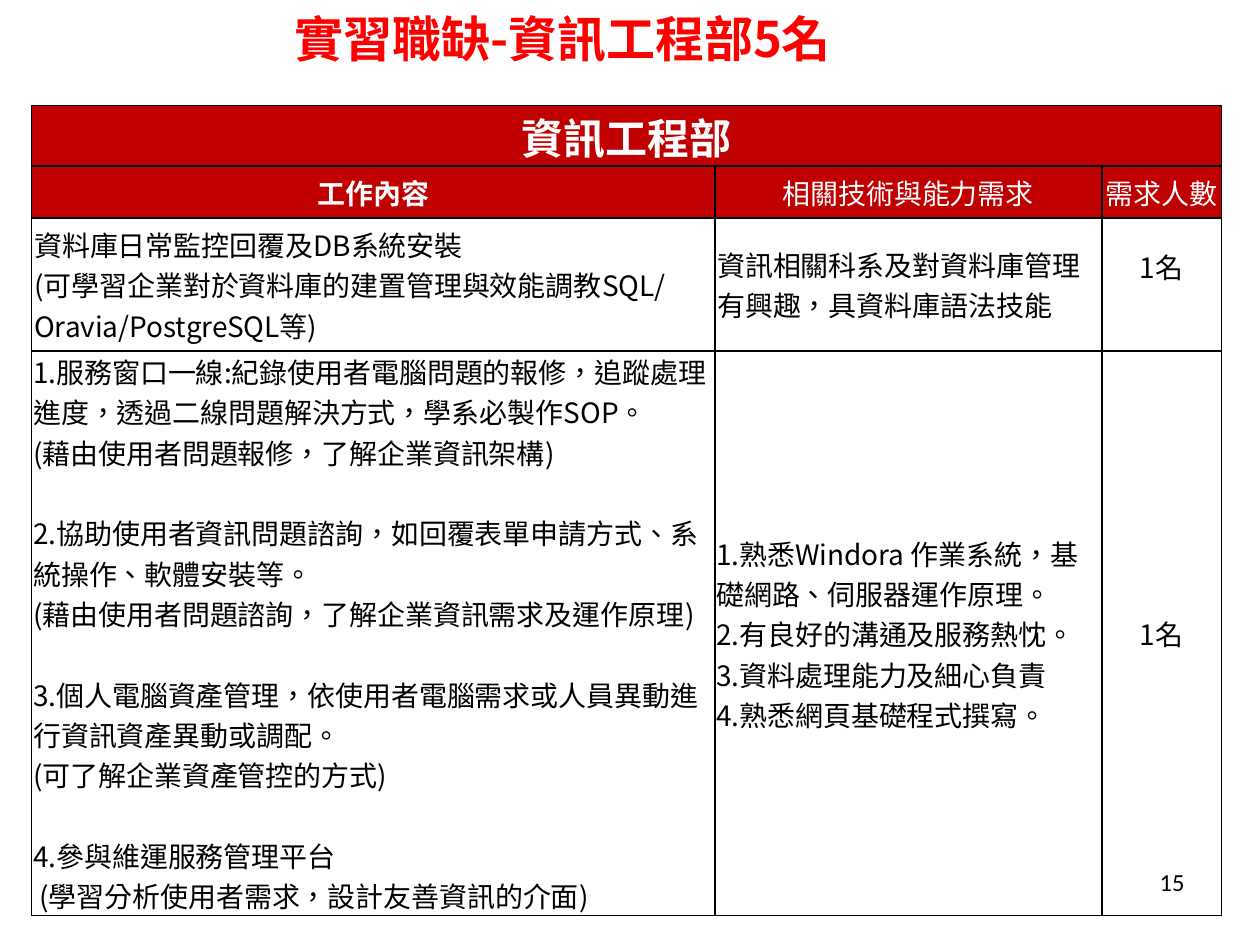
from pptx import Presentation
from pptx.dml.color import RGBColor
from pptx.enum.lang import MSO_LANGUAGE_ID as LANG
from pptx.enum.text import MSO_ANCHOR as ANCHOR, PP_ALIGN as ALIGN
from pptx.oxml import parse_xml
from pptx.oxml.ns import nsdecls
from pptx.util import Cm, Pt

CJK = "Noto Sans CJK SC"
RED, BLACK, WHITE = "C00000", "000000", "FFFFFF"


def add_text(tf, text, size=16, color=BLACK, bold=False, font=CJK,
             align=ALIGN.LEFT, gap=0):
    """Write one paragraph per line; a line after "\n\n" gets gap points before it."""
    tf.word_wrap = True
    for b, block in enumerate(text.split("\n\n")):
        for i, line in enumerate(block.split("\n")):
            p = tf.paragraphs[0] if b == i == 0 else tf.add_paragraph()
            p.alignment = align
            if b and i == 0:
                p.space_before = Pt(gap)
            r = p.add_run()
            r.text = line
            f = r.font
            f.size, f.bold, f.name = Pt(size), bold, font
            f.color.rgb = RGBColor.from_string(color)
            f.language_id = LANG.TRADITIONAL_CHINESE
            r._r.get_or_add_rPr().append(
                parse_xml(f'<a:ea {nsdecls("a")} typeface="{font}"/>'))


def add_borders(cell, color=BLACK, width=1):
    tc_pr = cell._tc.get_or_add_tcPr()
    for side in ("lnL", "lnR", "lnT", "lnB"):
        tc_pr.append(parse_xml(
            f'<a:{side} {nsdecls("a")} w="{Pt(width)}"><a:solidFill>'
            f'<a:srgbClr val="{color}"/></a:solidFill></a:{side}>'))


prs = Presentation()
prs.slide_width, prs.slide_height = Cm(25.4), Cm(19.05)
s = prs.slides.add_slide(prs.slide_layouts[6])

# Title
tf = s.shapes.add_textbox(Cm(5.69), Cm(0), Cm(19), Cm(1.52)).text_frame
tf.vertical_anchor = ANCHOR.MIDDLE
add_text(tf, "實習職缺-資訊工程部5名", size=28, color="FF0000", bold=True)

# Page number
tf = s.shapes.add_textbox(Cm(18.21), Cm(17.35), Cm(5.92), Cm(1.32)).text_frame
add_text(tf, "15", size=14, font="Calibri", align=ALIGN.RIGHT)

# Table contents
duties = """1.服務窗口一線:紀錄使用者電腦問題的報修，追蹤處理進度，透過二線問題解決方式，學系必製作SOP。
(藉由使用者問題報修，了解企業資訊架構)

2.協助使用者資訊問題諮詢，如回覆表單申請方式、系統操作、軟體安裝等。
(藉由使用者問題諮詢，了解企業資訊需求及運作原理)

3.個人電腦資產管理，依使用者電腦需求或人員異動進行資訊資產異動或調配。
(可了解企業資產管控的方式)

4.參與維運服務管理平台
 (學習分析使用者需求，設計友善資訊的介面)"""
skills = """1.熟悉Windora 作業系統，基礎網路、伺服器運作原理。
2.有良好的溝通及服務熱忱。
3.資料處理能力及細心負責
4.熟悉網頁基礎程式撰寫。"""
rows = [
    ["資訊工程部", "", ""],
    ["工作內容", "相關技術與能力需求", "需求人數"],
    ["資料庫日常監控回覆及DB系統安裝\n"
     "(可學習企業對於資料庫的建置管理與效能調教SQL/Oravia/PostgreSQL等)",
     "資訊相關科系及對資料庫管理有興趣，具資料庫語法技能", "1名"],
    [duties, skills, "1名"],
]
col_widths = [13.77, 7.8, 2.41]
row_heights = [1.22, 1.04, 2.69, 11.38]

# Table
table = s.shapes.add_table(len(rows), len(col_widths), Cm(0.64), Cm(2.13),
                           Cm(sum(col_widths)), Cm(sum(row_heights))).table
table.first_row = table.horz_banding = False
for col, width in zip(table.columns, col_widths):
    col.width = Cm(width)
for row, height in zip(table.rows, row_heights):
    row.height = Cm(height)
table.cell(0, 0).merge(table.cell(0, 2))

for i, row in enumerate(rows):
    for j, text in enumerate(row):
        cell = table.cell(i, j)
        header = i < 2
        add_borders(cell)
        cell.vertical_anchor = ANCHOR.MIDDLE
        cell.margin_left = cell.margin_right = Cm(0.03 if i == 3 and j < 2 else 0.05)
        cell.margin_top = cell.margin_bottom = Cm(0)
        if header:
            cell.fill.solid()
            cell.fill.fore_color.rgb = RGBColor.from_string(RED)
        else:
            cell.fill.background()
        if text:
            add_text(cell.text_frame, text, size=24 if i == 0 else 16,
                     color=WHITE if header else BLACK, bold=header and j == 0,
                     align=ALIGN.CENTER if header or j == 2 else ALIGN.LEFT, gap=23)

# The first head count sits a little above the middle
table.cell(2, 2).margin_bottom = Cm(0.72)

prs.save("out.pptx")
